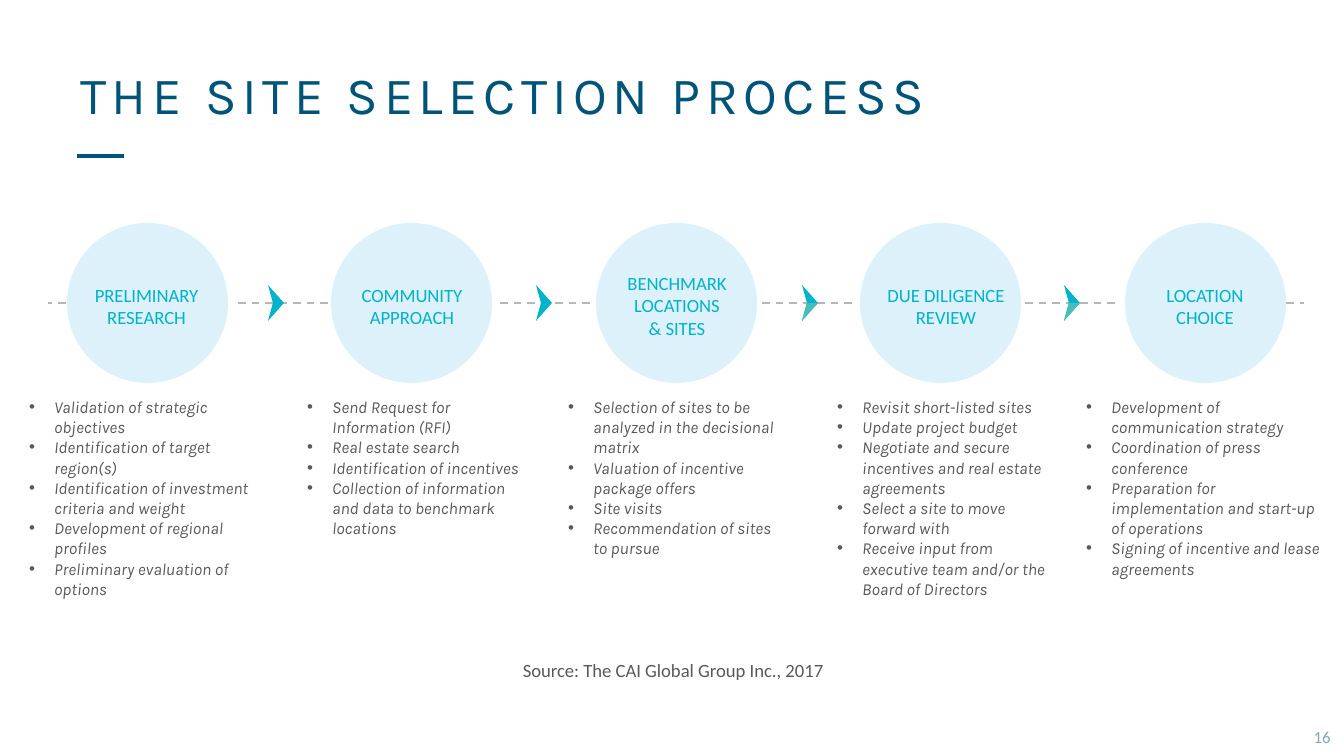
from lxml.etree import SubElement
from pptx import Presentation
from pptx.dml.color import RGBColor
from pptx.enum.shapes import MSO_CONNECTOR, MSO_SHAPE
from pptx.enum.text import MSO_ANCHOR, PP_ALIGN
from pptx.oxml.ns import qn
from pptx.util import Pt

PX = 914400 / 134.4
COLORS = {
    "title": "005379",
    "rule": "00537B",
    "dash": "B7B7B9",
    "circle": "DCF1F9",
    "accent": "00B3CC",
    "shade": "49BDBB",
    "body": "595959",
    "number": "85AAB1",
}
AXIS_Y = 303
DASHES = [(66, 48), (238, 328), (500, 590), (762, 853), (1025, 1115), (1286, 1304)]
CHEVRONS = [(268, False), (536, False), (802, True), (1064, True)]
STEPS = [
    ("PRELIMINARY RESEARCH", (78, 277, 137, 59), (16, 261), [
        "Validation of strategic objectives",
        "Identification of target region(s)",
        "Identification of investment criteria and weight",
        "Development of regional profiles",
        "Preliminary evaluation of options"]),
    ("COMMUNITY APPROACH", (332, 277, 160, 59), (294, 243), [
        "Send Request for Information (RFI)",
        "Real estate search",
        "Identification of incentives",
        "Collection of information and data to benchmark locations"]),
    ("BENCHMARK LOCATIONS\v& SITES", (597, 265, 160, 82), (555, 243), [
        "Selection of sites to be analyzed in the decisional matrix",
        "Valuation of incentive package offers",
        "Site visits",
        "Recommendation of sites to pursue"]),
    ("DUE DILIGENCE REVIEW", (866, 277, 160, 59), (824, 243), [
        "Revisit short-listed sites",
        "Update project budget",
        "Negotiate and secure incentives and real estate agreements",
        "Select a site to move forward with",
        "Receive input from executive team and/or the Board of Directors"]),
    ("LOCATION CHOICE", (1125, 277, 160, 59), (1073, 262), [
        "Development of communication strategy",
        "Coordination of press conference",
        "Preparation for implementation and start-up of operations",
        "Signing of incentive and lease agreements"]),
]


def px(*values):
    """Turn pixel lengths into a list of EMU."""
    return [round(v * PX) for v in values]


def rgb(name):
    """Look up a named colour."""
    return RGBColor.from_string(COLORS[name])


def paint(sp, color):
    """Give a shape a flat fill without outline or shadow."""
    sp.fill.solid()
    sp.fill.fore_color.rgb = rgb(color)
    sp.line.fill.background()
    sp.shadow.inherit = False


def add_text(s, box, lines, size, color, font="Calibri", align=PP_ALIGN.LEFT,
             anchor=MSO_ANCHOR.TOP, wrap=True, bullets=False, spacing=None):
    """Add a text box with one paragraph per line."""
    tf = s.shapes.add_textbox(*px(*box)).text_frame
    tf.word_wrap = wrap
    tf.vertical_anchor = anchor
    for i, line in enumerate(lines):
        p = tf.paragraphs[0] if i == 0 else tf.add_paragraph()
        p.text = line
        p.alignment = align
        if bullets:
            add_bullet(p)
        for r in p.runs:
            r.font.name = font
            r.font.size = Pt(size)
            r.font.italic = bullets
            r.font.color.rgb = rgb(color)
            if spacing:
                r.font._element.set("spc", str(spacing))


def add_bullet(p):
    """Give a paragraph a hanging round bullet."""
    pPr = p._p.get_or_add_pPr()
    indent = px(25)[0]
    pPr.set("marL", str(indent))
    pPr.set("indent", str(-indent))
    SubElement(pPr, qn("a:buFont"), typeface="Arial")
    SubElement(pPr, qn("a:buChar"), char="•")


def add_line(s, x1, x2, y, color, width, dashed=False):
    """Add a horizontal line, solid or dashed."""
    line = s.shapes.add_connector(MSO_CONNECTOR.STRAIGHT, *px(x1, y, x2, y))
    line.line.color.rgb = rgb(color)
    line.line.width = Pt(width)
    if dashed:
        dash = SubElement(line.line._get_or_add_ln(), qn("a:custDash"))
        SubElement(dash, qn("a:ds"), d="330000", sp="260000")
    SubElement(line._element.spPr, qn("a:effectLst"))


def add_outline(s, points, color):
    """Add a filled polygon."""
    start, *rest = [px(*point) for point in points]
    builder = s.shapes.build_freeform(*start, scale=1.0)
    builder.add_line_segments(rest, close=True)
    paint(builder.convert_to_shape(), color)


def add_chevron(s, x, shaded):
    """Add an arrowhead on the axis, with a shaded lower half if asked."""
    top, tip = (x, AXIS_Y - 18), (x + 16, AXIS_Y)
    bottom, notch = (x, AXIS_Y + 18), (x + 5, AXIS_Y)
    add_outline(s, [top, tip, bottom, notch], "accent")
    if shaded:
        add_outline(s, [tip, bottom, notch], "shade")


def add_step(s, index, label, label_box, column, items):
    """Add a circle with its label and the bullet list below."""
    left = 67 + index * 529 // 2
    paint(s.shapes.add_shape(MSO_SHAPE.OVAL, *px(left, 223, 161, 160)), "circle")
    add_text(s, label_box, [label], 10, "accent", align=PP_ALIGN.CENTER)
    x, width = column
    add_text(s, (x, 390, width, 218), items, 9, "body", "Karla", bullets=True)


def main():
    """Build the slide and save it."""
    prs = Presentation()
    prs.slide_width, prs.slide_height = px(1344, 756)
    s = prs.slides.add_slide(prs.slide_layouts[6])
    add_line(s, 77, 124, 156, "rule", 2.25)
    add_text(s, (67, 31, 1210, 126), ["THE SITE SELECTION PROCESS"], 28, "title",
             "Karla", anchor=MSO_ANCHOR.MIDDLE, spacing=300)
    for x1, x2 in DASHES:
        add_line(s, x1, x2, AXIS_Y, "dash", 1.25, dashed=True)
    for x, shaded in CHEVRONS:
        add_chevron(s, x, shaded)
    for i, step in enumerate(STEPS):
        add_step(s, i, *step)
    add_text(s, (505, 652, 336, 36), ["Source: The CAI Global Group Inc., 2017"], 10,
             "body", align=PP_ALIGN.CENTER, wrap=False)
    add_text(s, (926, 719, 418, 36), ["16"], 9, "number", align=PP_ALIGN.RIGHT,
             anchor=MSO_ANCHOR.MIDDLE)
    prs.save("out.pptx")


if __name__ == "__main__":
    main()
